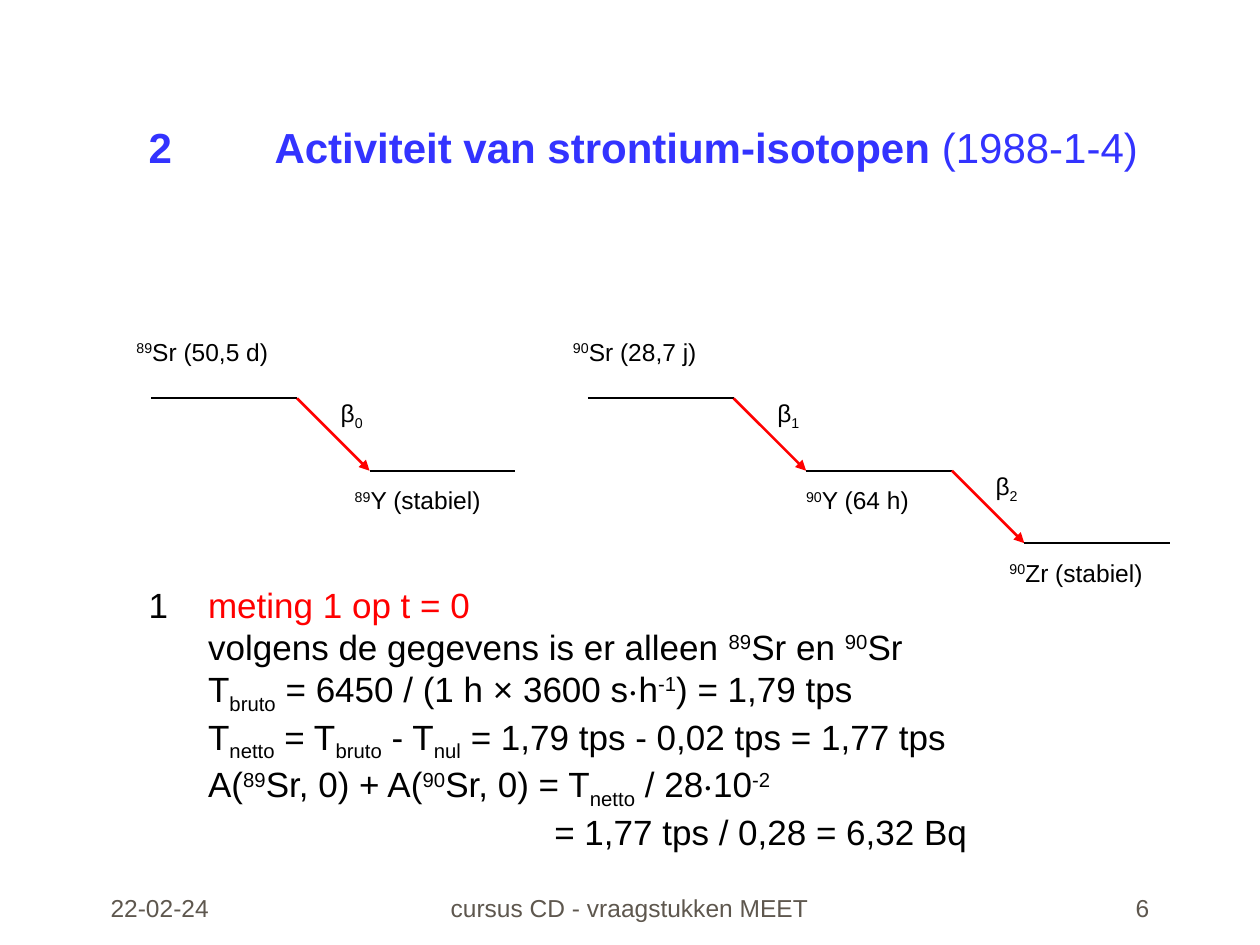
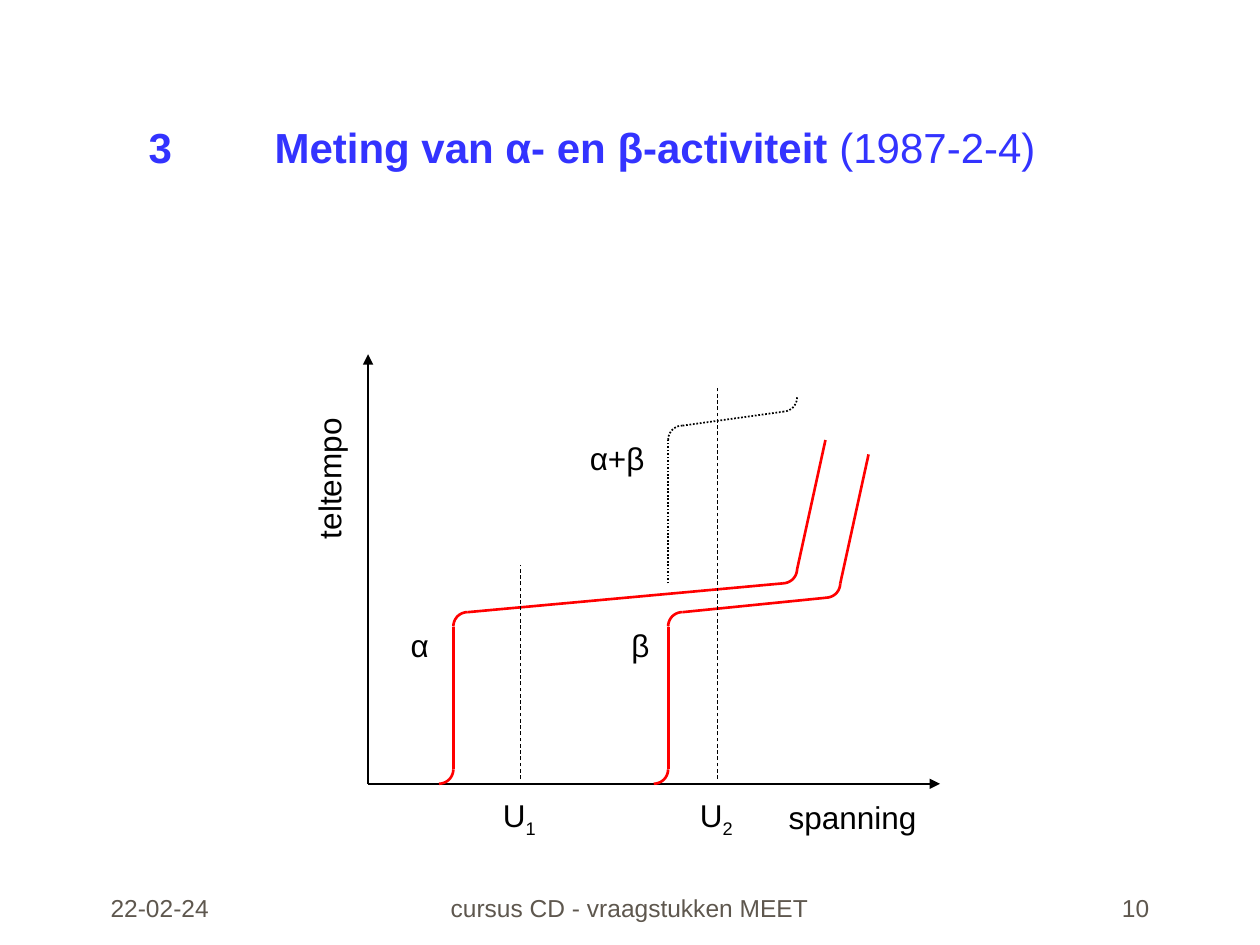
import math

from lxml import etree
from pptx import Presentation
from pptx.dml.color import RGBColor
from pptx.enum.dml import MSO_LINE
from pptx.enum.shapes import MSO_CONNECTOR, MSO_SHAPE
from pptx.enum.text import MSO_ANCHOR, MSO_AUTO_SIZE, PP_ALIGN
from pptx.oxml.ns import qn
from pptx.util import Cm, Pt

STRAIGHT = MSO_CONNECTOR.STRAIGHT
RECTANGLE = MSO_SHAPE.RECTANGLE
TOP, BOTTOM = MSO_ANCHOR.TOP, MSO_ANCHOR.BOTTOM
LEFT, CENTER, RIGHT = PP_ALIGN.LEFT, PP_ALIGN.CENTER, PP_ALIGN.RIGHT
DOTTED, DASHED = MSO_LINE.ROUND_DOT, MSO_LINE.DASH
NO_FIT = MSO_AUTO_SIZE.NONE

COLORS = {
    "title": "3333FF",
    "text": "000000",
    "accent": "FF0000",
    "footer": "5E574E",
    "paper": "FFFFFF",
}
FONT = "Arial"
DOT_FONT = "TeX Gyre Schola"
BASELINES = {"^": "30000", "_": "-25000"}

AXIS_PEN = {"color": "text", "width": 1}
CURVE_PEN = {"color": "accent", "width": 1.5}
SUM_PEN = {"color": "text", "width": 1, "dash": DOTTED}
GUIDE_PEN = {"color": "text", "width": 0.5, "dash": DASHED}

LEVEL, STEP = 2.94, 1.46
CORNER = 0.29


def rgb(name):
    return RGBColor.from_string(COLORS[name])


def write(paragraph, text, size=20, color="text", bold=False, align=LEFT):
    """Split text at |; a leading ^ raises a piece and a leading _ lowers it."""
    paragraph.alignment = align
    for piece in text.split("|"):
        baseline = BASELINES.get(piece[0])
        run = paragraph.add_run()
        run.text = piece[1:] if baseline else piece
        run.font.name = DOT_FONT if piece == "·" else FONT
        run.font.size = Pt(size)
        run.font.bold = bold
        run.font.color.rgb = rgb(color)
        if baseline:
            run._r.get_or_add_rPr().set("baseline", baseline)


def indent(paragraph, left, first=0):
    properties = paragraph._p.get_or_add_pPr()
    properties.set("marL", str(Cm(left)))
    properties.set("indent", str(Cm(first)))


def place(shape, left, top, width, height, anchor):
    shape.left, shape.top = Cm(left), Cm(top)
    shape.width, shape.height = Cm(width), Cm(height)
    frame = shape.text_frame
    frame.word_wrap = True
    frame.auto_size = NO_FIT
    frame.vertical_anchor = anchor
    return frame


def add_title(slide, number, topic, source):
    frame = place(slide.shapes.title, 2.74, 1.9, 21.44, 1.7, BOTTOM)
    heading = frame.paragraphs[0]
    indent(heading, 2.54, -2.54)
    write(heading, f"{number}\t{topic}", size=24, color="title", bold=True)
    write(heading, f" ({source})", size=24, color="title")


def add_footer(slide, page):
    for left, width, align, text in (
        (1.98, 5.36, LEFT, "22-02-24"),
        (8.74, 7.9, CENTER, "cursus CD - vraagstukken MEET"),
        (18.34, 5.08, RIGHT, page),
    ):
        box = slide.shapes.add_textbox(0, 0, 0, 0)
        frame = place(box, left, 17.3, width, 1.42, BOTTOM)
        write(frame.paragraphs[0], text, size=14, color="footer", align=align)


def add_label(slide, text, left, top, width, height, size, vertical=False):
    label = slide.shapes.add_shape(RECTANGLE, 0, 0, 0, 0)
    label.shadow.inherit = False
    label.fill.solid()
    label.fill.fore_color.rgb = rgb("paper")
    label.line.fill.background()
    frame = place(label, left, top, width, height, TOP)
    frame.margin_left = frame.margin_top = 0
    frame.margin_right = frame.margin_bottom = 0
    if vertical:
        frame._txBody.bodyPr.set("vert", "vert270")
    write(frame.paragraphs[0], text, size=size)


def apply_pen(line, color, width, dash=None):
    line.color.rgb = rgb(color)
    line.width = Pt(width)
    if dash:
        line.dash_style = dash


def add_stroke(slide, start, end, pen, arrow=False):
    points = [Cm(value) for value in (*start, *end)]
    stroke = slide.shapes.add_connector(STRAIGHT, *points)
    apply_pen(stroke.line, **pen)
    properties = stroke._element.spPr
    if arrow:
        outline = stroke.line._get_or_add_ln()
        etree.SubElement(outline, qn("a:tailEnd"), type="triangle")
    etree.SubElement(properties, qn("a:effectLst"))


def add_corner(slide, center_x, center_y, start_angle, pen):
    angles = [math.radians(start_angle + 9 * i) for i in range(11)]
    points = [
        (Cm(center_x + CORNER * math.cos(a)), Cm(center_y + CORNER * math.sin(a)))
        for a in angles
    ]
    builder = slide.shapes.build_freeform(*points[0])
    builder.add_line_segments(points[1:], close=False)
    corner = builder.convert_to_shape()
    corner.shadow.inherit = False
    corner.fill.background()
    apply_pen(corner.line, **pen)


def add_decay_chain(slide, left, top, parent, daughters):
    add_label(slide, parent, left - 0.3, top - 1.24, 4.4, 0.96, 14)
    x, y = left, top
    for beta, daughter, shift in daughters:
        x += LEVEL
        add_label(slide, beta, x + 0.88, y, 0.88, 0.86, 14)
        x, y = x + STEP, y + STEP
        add_label(slide, daughter, x + shift, y + 0.29, 3.4, 0.9, 14)

    x, y = left, top
    add_stroke(slide, (x, y), (x + LEVEL, y), AXIS_PEN)
    for _ in daughters:
        x += LEVEL
        add_stroke(slide, (x, y), (x + STEP, y + STEP), CURVE_PEN, arrow=True)
        x, y = x + STEP, y + STEP
        add_stroke(slide, (x, y), (x + LEVEL, y), AXIS_PEN)


def add_plateau(slide, rise_x, base_y, knee_y, end, pen):
    end_x, end_y = end
    add_stroke(slide, (rise_x, base_y), (rise_x, knee_y + CORNER), pen)
    add_corner(slide, rise_x + CORNER, knee_y + CORNER, 180, pen)
    add_stroke(slide, (rise_x + CORNER, knee_y), end, pen)
    add_corner(slide, end_x, end_y - CORNER, 0, pen)


def add_count_curve(slide, rise_x, axis_y, knee_y, end):
    foot_y = axis_y - CORNER
    add_corner(slide, rise_x - CORNER, foot_y, 0, CURVE_PEN)
    add_plateau(slide, rise_x, foot_y, knee_y, end, CURVE_PEN)
    tail_x, tail_y = end[0] + CORNER, end[1] - CORNER
    add_stroke(slide, (tail_x, tail_y), (tail_x + 0.57, tail_y - 2.6), CURVE_PEN)


def add_calculation(slide):
    frame = place(slide.placeholders[1], 2.74, 11.63, 21.59, 5.92, TOP)
    first = frame.paragraphs[0]
    indent(first, 1.2, -1.2)
    write(first, "1\t")
    write(first, "meting 1 op t = 0", color="accent")
    for left, text in (
        (1.2, "volgens de gegevens is er alleen |^89|Sr en |^90|Sr"),
        (1.2, "T|_bruto| = 6450 / (1 h × 3600 s|·|h|^-1|) = 1,79 tps"),
        (1.2, "T|_netto| = T|_bruto| - T|_nul| = 1,79 tps - 0,02 tps = 1,77 tps"),
        (1.2, "A(|^89|Sr, 0) + A(|^90|Sr, 0) = T|_netto| / 28|·|10|^-2"),
        (8.18, "= 1,77 tps / 0,28 = 6,32 Bq"),
    ):
        line = frame.add_paragraph()
        indent(line, left)
        write(line, text)
    for line in frame.paragraphs:
        line.space_before = Pt(0)


def build_strontium(deck):
    slide = deck.slides.add_slide(deck.slide_layouts[0])
    add_title(slide, 2, "Activiteit van strontium-isotopen", "1988-1-4")
    add_calculation(slide)
    add_decay_chain(slide, 3.05, 8.03, "^89|Sr (50,5 d)",
                    [("β|_0", "^89|Y (stabiel)", -0.3)])
    add_decay_chain(slide, 11.85, 8.03, "^90|Sr (28,7 j)",
                    [("β|_1", "^90|Y (64 h)", 0),
                     ("β|_2", "^90|Zr (stabiel)", -0.3)])
    add_footer(slide, "6")


def build_alpha_beta(deck):
    slide = deck.slides.add_slide(deck.slide_layouts[5])
    add_title(slide, 3, "Meting van α- en β-activiteit", "1987-2-4")

    add_label(slide, "α", 8.28, 12.62, 0.58, 0.86, 18)
    add_label(slide, "β", 12.73, 12.62, 0.58, 0.86, 18)
    add_label(slide, "α+β", 11.89, 8.86, 1.45, 0.86, 18)
    add_label(slide, "spanning", 15.9, 16.08, 3.25, 1.07, 18)
    add_label(slide, "teltempo", 6.25, 8, 0.86, 2.87, 18, vertical=True)

    origin_x, axis_y = 7.42, 15.8
    origin = (origin_x, axis_y)
    add_stroke(slide, origin, (origin_x, 7.14), AXIS_PEN, arrow=True)
    add_stroke(slide, origin, (18.95, axis_y), AXIS_PEN, arrow=True)

    alpha_x, beta_x, knee_y = 9.14, 13.47, 12.34
    add_count_curve(slide, alpha_x, axis_y, knee_y, (15.78, 11.76))
    add_count_curve(slide, beta_x, axis_y, knee_y, (16.65, 12.05))
    add_plateau(slide, beta_x, 11.76, 8.58, (15.78, 8.3), SUM_PEN)

    for voltage, x, top in (("U|_1", 10.49, 11.38), ("U|_2", 14.46, 7.8)):
        add_label(slide, voltage, x - 0.35, 16.05, 0.86, 0.86, 18)
        add_stroke(slide, (x, 15.7), (x, top), GUIDE_PEN)
    add_footer(slide, "10")


def main():
    deck = Presentation()
    deck.slide_width, deck.slide_height = Cm(25.4), Cm(19.05)
    build_strontium(deck)
    build_alpha_beta(deck)
    deck.save("out.pptx")


if __name__ == "__main__":
    main()
